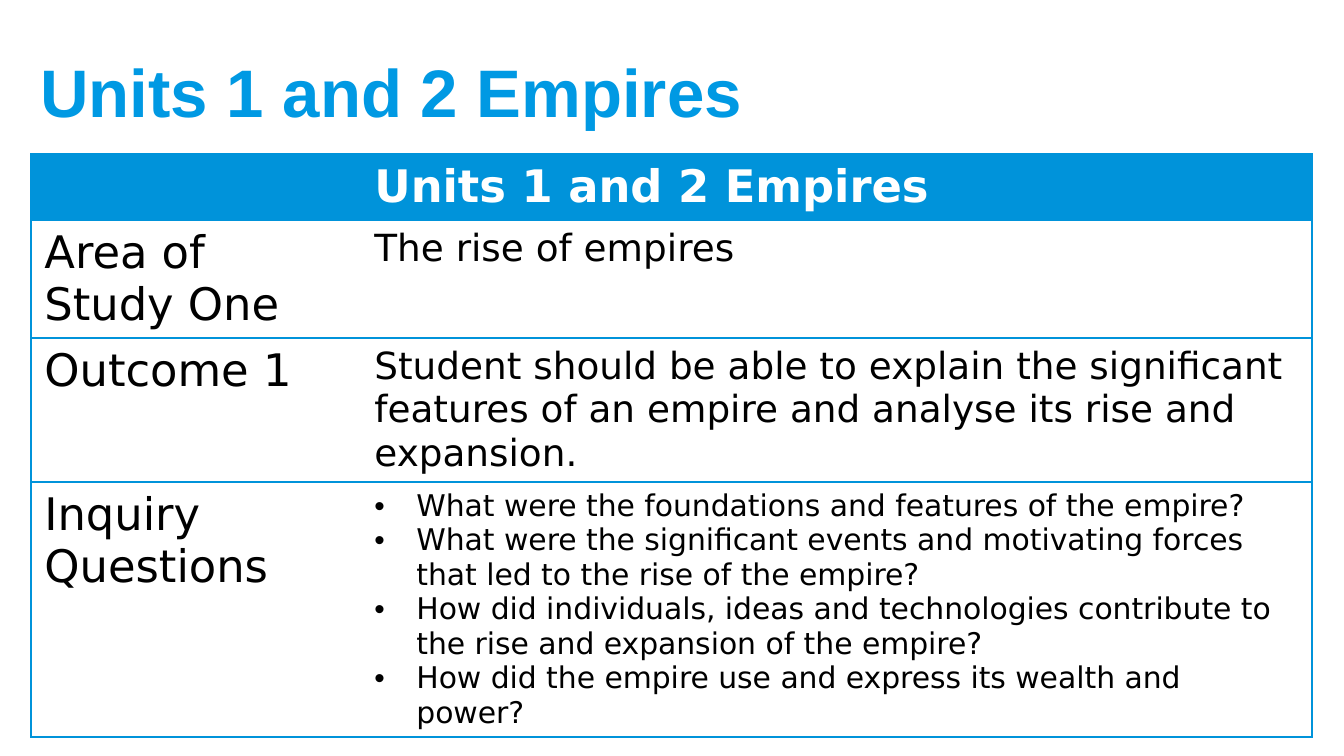
from lxml.etree import SubElement
from pptx import Presentation
from pptx.dml.color import RGBColor
from pptx.enum.text import MSO_ANCHOR as Anchor, PP_ALIGN as Align
from pptx.oxml.ns import qn
from pptx.util import Emu, Pt

SCALE = 914400 / 134.4
COLORS = {"title": "0099E3", "blue": "0093DA", "white": "FFFFFF", "black": "000000"}
PLAIN_TABLE = "{2D5ABB26-0587-4C30-8999-92F81FD0307C}"
COLUMNS = [330, 951]
ROWS = [
    (66, "", ["Units 1 and 2 Empires"], 24),
    (118, "Area of Study One", ["The rise of empires"], 20),
    (144, "Outcome 1", [
        "Student should be able to explain the significant features of an empire "
        "and analyse its rise and expansion."], 20),
    (255, "Inquiry Questions", [
        "What were the foundations and features of the empire?",
        "What were the significant events and motivating forces that led to the rise of the empire?",
        "How did individuals, ideas and technologies contribute to the rise and expansion of the empire?",
        "How did the empire use and express its wealth and power?"], 16),
]


def px(length):
    return Emu(round(length * SCALE))


def rgb(name):
    return RGBColor.from_string(COLORS[name])


class SlideBuilder:
    """Holds the deck style and the slide being built."""

    def __init__(self, deck):
        self.page = deck.slides.add_slide(deck.slide_layouts[5])
        self.title_font, self.body_font = "Arial", "DejaVu Sans"

    def add_text(self, para, text, size, color, font, bold=False):
        span = para.add_run()
        span.text = text
        span.font.name, span.font.size, span.font.bold = font, Pt(size), bold
        span.font.color.rgb = rgb(color)

    def title(self, text, left, top, width, height):
        box = self.page.shapes.title
        box.left, box.top, box.width, box.height = map(px, (left, top, width, height))
        box.text_frame.vertical_anchor = Anchor.MIDDLE
        para = box.text_frame.paragraphs[0]
        para.alignment = Align.LEFT
        self.add_text(para, text, 36, "title", self.title_font, True)

    def bullet(self, para):
        props = para._p.get_or_add_pPr()
        props.set("marL", str(px(42)))
        props.set("indent", str(-px(42)))
        SubElement(props, qn("a:buFont"), typeface="Arial")
        SubElement(props, qn("a:buChar"), char="•")

    def borders(self, cell, sides):
        props = cell._tc.get_or_add_tcPr()
        for index, side in enumerate(sides):
            line = SubElement(props, qn(f"a:ln{side}"), w=str(Pt(0.75)))
            fill = SubElement(line, qn("a:solidFill"))
            SubElement(fill, qn("a:srgbClr"), val=COLORS["blue"])
            props.insert(index, line)

    def cell(self, cell, texts, size, header, sides):
        if header:
            cell.fill.solid()
            cell.fill.fore_color.rgb = rgb("blue")
        else:
            cell.fill.background()
        self.borders(cell, sides)
        frame = cell.text_frame
        for index, text in enumerate(texts):
            para = frame.add_paragraph() if index else frame.paragraphs[0]
            if len(texts) > 1:
                self.bullet(para)
            self.add_text(para, text, size, "white" if header else "black", self.body_font, header)

    def table(self, left, top, columns, rows):
        heights = [row[0] for row in rows]
        frame = self.page.shapes.add_table(
            len(rows), len(columns), px(left), px(top), px(sum(columns)), px(sum(heights)))
        table = frame.table
        table.horz_banding = False
        table._tbl.tblPr.find(qn("a:tableStyleId")).text = PLAIN_TABLE
        for column, width in zip(table.columns, columns):
            column.width = px(width)
        for index, (height, label, texts, size) in enumerate(rows):
            table.rows[index].height = px(height)
            header = index == 0
            self.cell(table.cell(index, 0), [label] if label else [], 24, header, "LTB")
            self.cell(table.cell(index, 1), texts, size, header, "RTB")


def main():
    deck = Presentation()
    deck.slide_width, deck.slide_height = px(1344), px(756)
    builder = SlideBuilder(deck)
    builder.title("Units 1 and 2 Empires", 27, 28, 1281, 126)
    builder.table(31, 154, COLUMNS, ROWS)
    deck.save("out.pptx")


if __name__ == "__main__":
    main()
